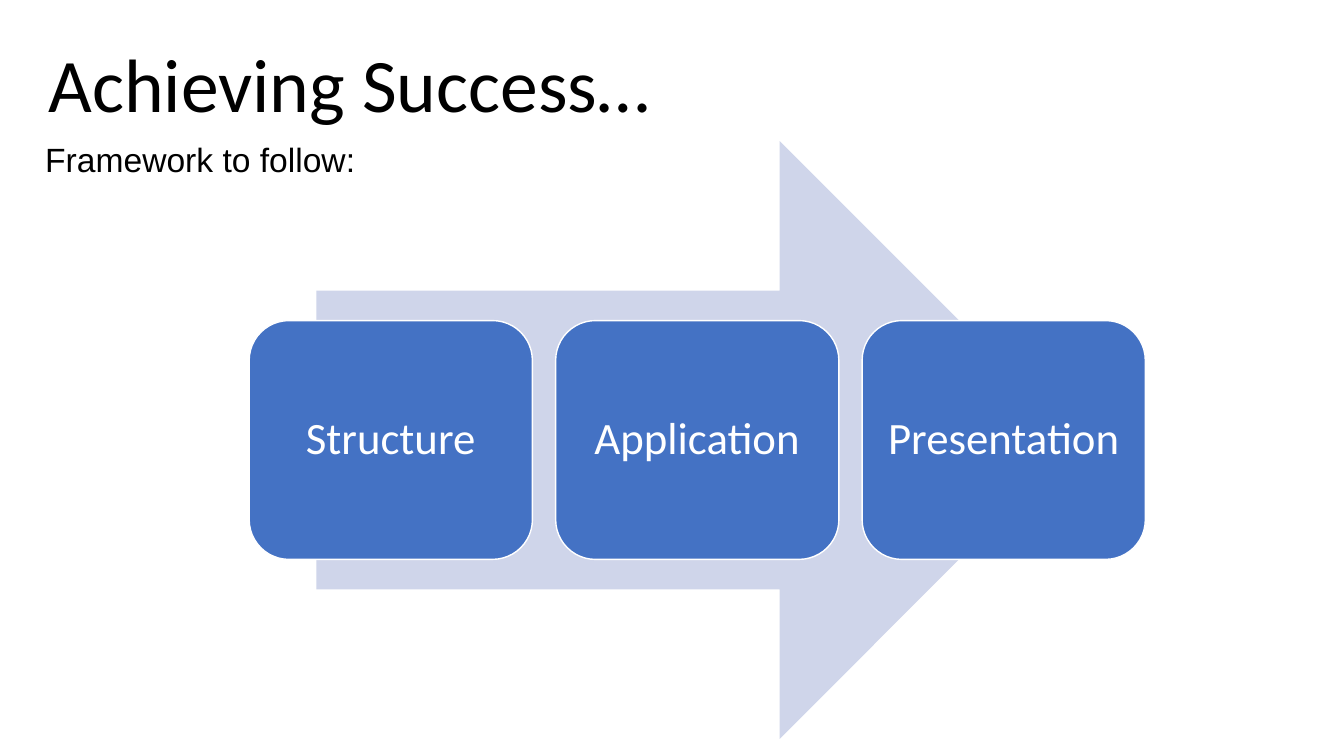
from pptx import Presentation
from pptx.dml.color import RGBColor
from pptx.enum.shapes import MSO_SHAPE as Shape
from pptx.enum.text import MSO_ANCHOR as Anchor, MSO_AUTO_SIZE as AutoSize, PP_ALIGN as Align
from pptx.util import Pt

TITLE = "Achieving Success…"
SUBTITLE = "Framework to follow:"
STAGES = ["Structure", "Application", "Presentation"]
COLORS = {"text": "000000", "arrow": "CFD5EA", "stage": "4472C4", "white": "FFFFFF"}

TITLE_AREA = (25.2, 23, 448.6, 72.7)
SUBTITLE_AREA = (25.2, 95.8, 896.4, 416.2)
ARROW_AREA = (226.1, 100.8, 544.3, 427)
STAGE_LEFT, STAGE_WIDTH, STAGE_HEIGHT = 178, 202.3, 170.6
STAGE_GAP = 16.6
STAGE_INSET = 9.6


def color(name):
    return RGBColor.from_string(COLORS[name])


def write(box, text, size, font="Calibri", ink="text", align=Align.LEFT,
          anchor=Anchor.TOP, wrap=True, before=0, line_spacing=1.0):
    frame = box.text_frame
    frame.word_wrap = wrap
    frame.vertical_anchor = anchor
    para = frame.paragraphs[0]
    para.alignment = align
    para.space_before = Pt(before)
    para.line_spacing = line_spacing
    span = para.add_run()
    span.text = text
    span.font.name = font
    span.font.size = Pt(size)
    span.font.color.rgb = color(ink)
    return frame


def add_block(slide, kind, area, fill, line=None):
    block = slide.shapes.add_shape(kind, *map(Pt, area))
    block.shadow.inherit = False
    block.fill.solid()
    block.fill.fore_color.rgb = color(fill)
    if line:
        block.line.color.rgb = color(line)
        block.line.width = Pt(1)
    else:
        block.line.fill.background()
    return block


def main():
    deck = Presentation()
    deck.slide_width, deck.slide_height = Pt(960), Pt(540)
    slide = deck.slides.add_slide(deck.slide_layouts[6])

    title = slide.shapes.add_textbox(*map(Pt, TITLE_AREA))
    frame = write(title, TITLE, 54, align=Align.CENTER, wrap=False)
    frame.auto_size = AutoSize.SHAPE_TO_FIT_TEXT
    subtitle = slide.shapes.add_textbox(*map(Pt, SUBTITLE_AREA))
    write(subtitle, SUBTITLE, 24, font="Arial", before=2)

    add_block(slide, Shape.RIGHT_ARROW, ARROW_AREA, "arrow")
    arrow_top, arrow_height = ARROW_AREA[1], ARROW_AREA[3]
    stage_top = arrow_top + (arrow_height - STAGE_HEIGHT) / 2
    for index, name in enumerate(STAGES):
        left = STAGE_LEFT + index * (STAGE_WIDTH + STAGE_GAP)
        stage = add_block(slide, Shape.ROUNDED_RECTANGLE,
                          (left, stage_top, STAGE_WIDTH, STAGE_HEIGHT), "stage", line="white")
        frame = write(stage, name, 32, ink="white", align=Align.CENTER,
                      anchor=Anchor.MIDDLE, line_spacing=0.9)
        frame.margin_left = frame.margin_right = Pt(STAGE_INSET)
        frame.margin_top = frame.margin_bottom = Pt(STAGE_INSET)

    deck.save("out.pptx")


if __name__ == "__main__":
    main()
